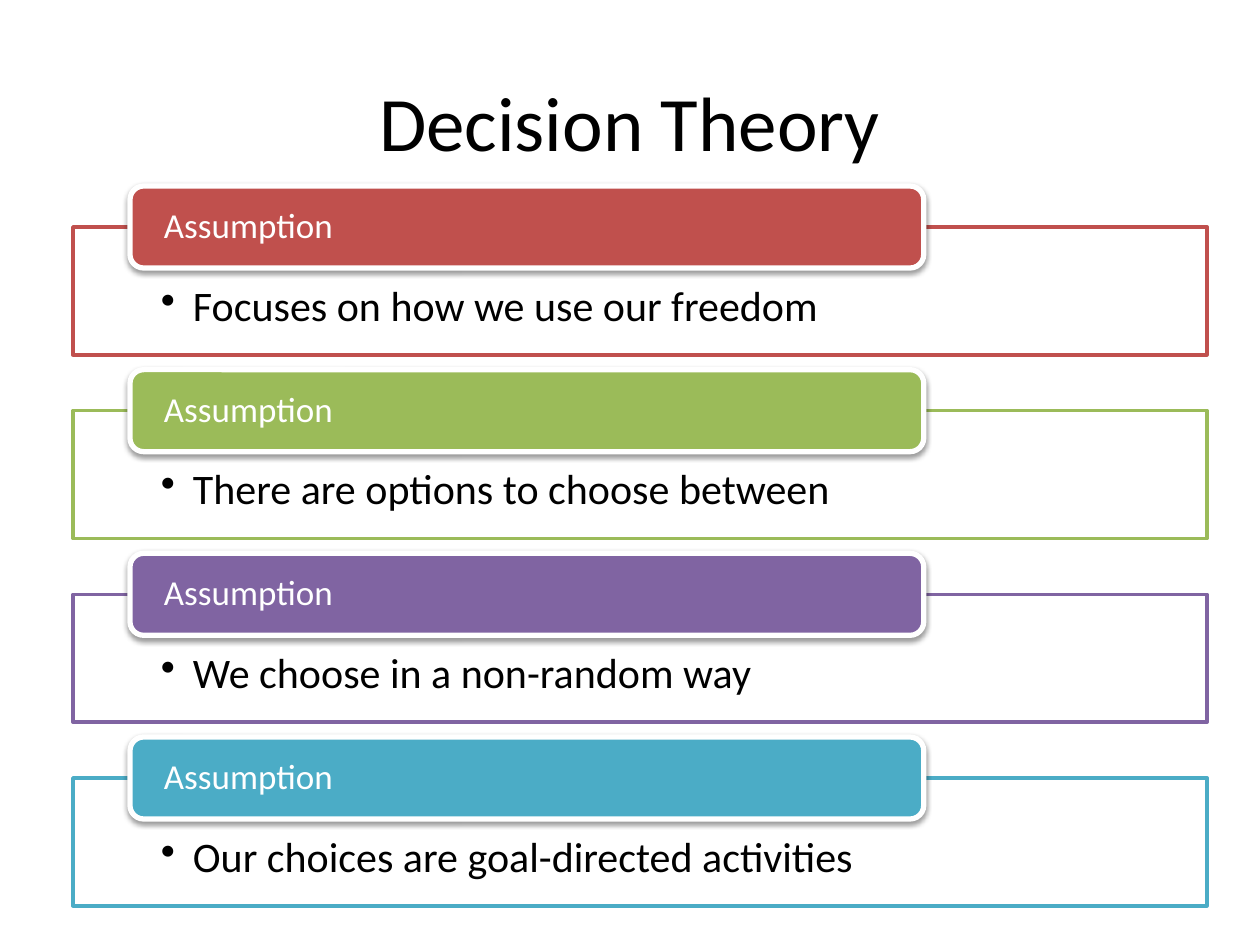
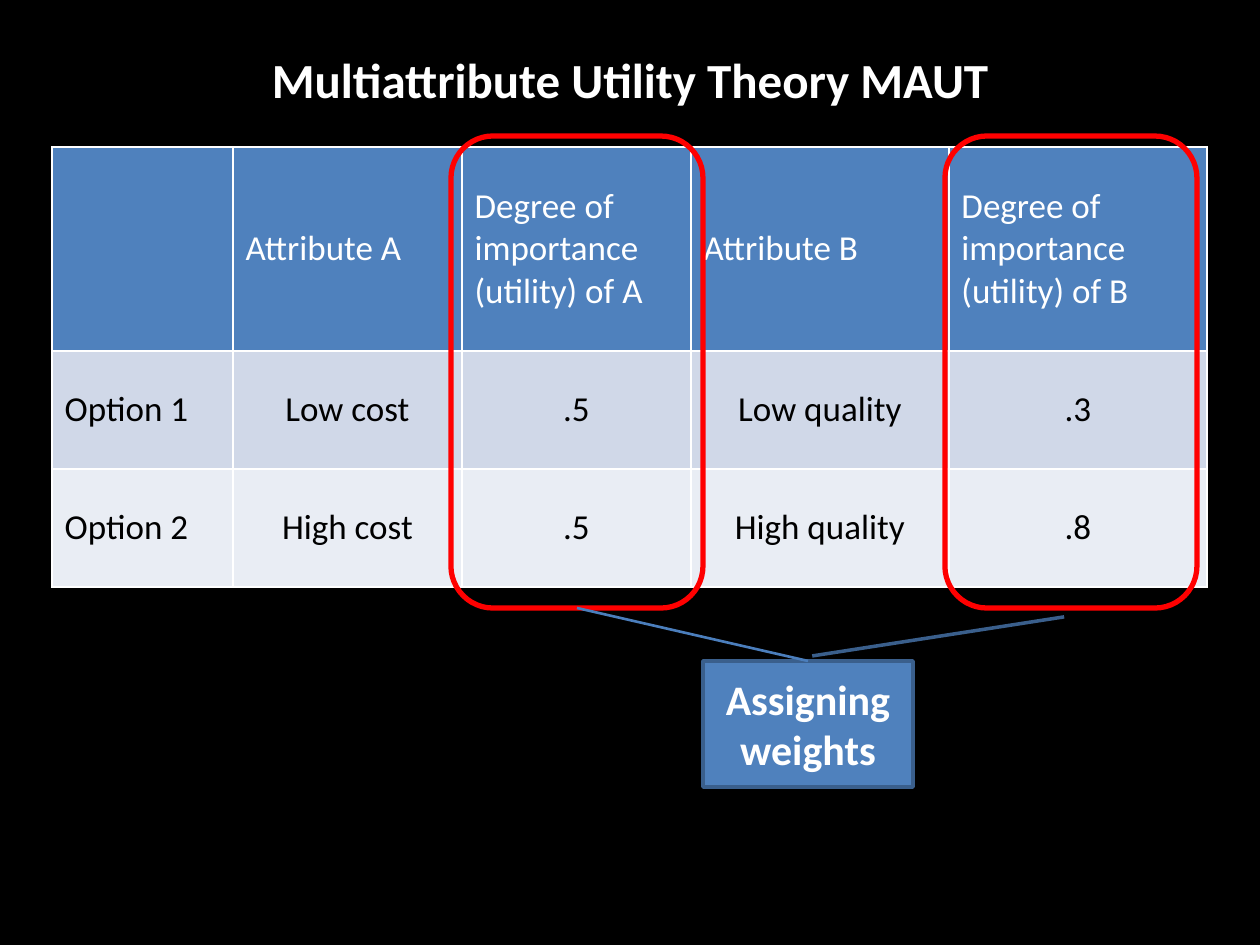
from dataclasses import dataclass
from typing import NamedTuple

from lxml.etree import SubElement
from pptx import Presentation
from pptx.dml.color import RGBColor
from pptx.enum.shapes import MSO_CONNECTOR, MSO_SHAPE
from pptx.enum.text import MSO_ANCHOR, PP_ALIGN
from pptx.oxml import parse_xml
from pptx.oxml.ns import nsdecls, qn
from pptx.util import Pt


@dataclass(frozen=True)
class Theme:
    """Colours, font and type sizes shared by the slides."""
    font: str = "Calibri"
    white: str = "FFFFFF"
    black: str = "000000"
    blue: str = "4F81BD"
    blue_edge: str = "3A5F8C"
    blue_link: str = "4B7EBC"
    highlight: str = "FF0000"
    accents: tuple = ("C0504D", "9BBB59", "8064A2", "4BACC6")
    bands: tuple = ("D0D8E8", "E9EDF4")
    title: int = 44
    table_title: int = 28
    body: int = 24
    label: int = 20


class Box(NamedTuple):
    """A rectangle in px."""
    left: float
    top: float
    width: float
    height: float


THEME = Theme()
PX_PER_INCH = 126
ASSUMPTIONS = (
    "Focuses on how we use our freedom",
    "There are options to choose between",
    "We choose in a non-random way",
    "Our choices are goal-directed activities",
)
UTILITIES = (
    ("", "Attribute A", "Degree of importance (utility) of A",
     "Attribute B", "Degree of importance (utility) of B"),
    ("Option 1", "Low cost", ".5", "Low quality", ".3"),
    ("Option 2", "High cost", ".5", "High quality", ".8"),
)


def emu(px):
    """Turn px into EMU."""
    return round(px * 914400 / PX_PER_INCH)


def apply(target, values):
    """Set each named attribute on the target."""
    for name, value in values.items():
        setattr(target, name, value)


def write(frame, text, size, color, bold=False, align=PP_ALIGN.LEFT,
          anchor=MSO_ANCHOR.MIDDLE, insets=None):
    """Fill a text frame with one styled paragraph and return it."""
    apply(frame, {"word_wrap": True, "vertical_anchor": anchor})
    if insets:
        sides = ("margin_left", "margin_top", "margin_right", "margin_bottom")
        apply(frame, dict(zip(sides, map(emu, insets))))
    paragraph = frame.paragraphs[0]
    paragraph.alignment = align
    run = paragraph.add_run()
    run.text = text
    apply(run.font, {"name": THEME.font, "size": Pt(size), "bold": bold})
    run.font.color.rgb = RGBColor.from_string(color)
    return paragraph


def add_block(slide, kind, box, fill, edge, weight):
    """Add a flat shape with the given fill and outline."""
    block = slide.shapes.add_shape(kind, *map(emu, box))
    block.shadow.inherit = False
    if fill:
        block.fill.solid()
        block.fill.fore_color.rgb = RGBColor.from_string(fill)
    else:
        block.fill.background()
    block.line.color.rgb = RGBColor.from_string(edge)
    block.line.width = Pt(weight)
    return block


def add_title(slide, box, text, size, color, bold=False):
    """Place a centred title in the box."""
    title = slide.shapes.add_textbox(*map(emu, box))
    write(title.text_frame, text, size, color, bold, PP_ALIGN.CENTER)


def add_slide(deck, background):
    """Add a blank slide with a plain background."""
    slide = deck.slides.add_slide(deck.slide_layouts[6])
    slide.background.fill.solid()
    slide.background.fill.fore_color.rgb = RGBColor.from_string(background)
    return slide


def add_bullet(paragraph, indent):
    """Give a paragraph a hanging bullet."""
    properties = paragraph._p.get_or_add_pPr()
    properties.set("marL", str(emu(indent)))
    properties.set("indent", str(-emu(indent)))
    SubElement(properties, qn("a:buChar"), char="•")


def add_drop_shadow(block):
    """Cast a soft shadow straight down."""
    effects = block._element.spPr.find(qn("a:effectLst"))
    effects.append(parse_xml(
        f'<a:outerShdw {nsdecls("a")} blurRad="{Pt(3.1)}" dist="{Pt(1.6)}" '
        f'dir="5400000" rotWithShape="0"><a:srgbClr val="{THEME.black}">'
        '<a:alpha val="38000"/></a:srgbClr></a:outerShdw>'))


def add_assumption(slide, box, text, accent):
    """Place an outlined statement with its heading tab in the box."""
    tab_height, overhang = 82, 41
    panel = Box(box.left, box.top + overhang, box.width, box.height - overhang)
    statement = add_block(slide, MSO_SHAPE.RECTANGLE, panel, THEME.white, accent, 2)
    tint = statement._element.spPr.find(qn("a:solidFill"))[0]
    SubElement(tint, qn("a:alpha"), val="90000")
    paragraph = write(statement.text_frame, text, THEME.body, THEME.black,
                      anchor=MSO_ANCHOR.TOP, insets=(88, 58, 88, 24))
    paragraph.line_spacing = 0.9
    add_bullet(paragraph, 32)

    tab = Box(box.left + 57, box.top, box.width * 0.7, tab_height)
    heading = add_block(slide, MSO_SHAPE.ROUNDED_RECTANGLE, tab, accent, THEME.white, 3)
    add_drop_shadow(heading)
    write(heading.text_frame, "Assumption", THEME.label, THEME.white,
          insets=(30, 0, 30, 0)).line_spacing = 0.9


def add_assumptions(slide, box):
    """Stack the assumptions evenly over the height of the box."""
    card_height = 169
    pitch = (box.height - card_height) / (len(ASSUMPTIONS) - 1)
    for index, (text, accent) in enumerate(zip(ASSUMPTIONS, THEME.accents)):
        card = Box(box.left, box.top + index * pitch, box.width, card_height)
        add_assumption(slide, card, text, accent)


def add_borders(cell):
    """Rule all four sides of a table cell in white."""
    properties = cell._tc.get_or_add_tcPr()
    for position, side in enumerate(("lnL", "lnR", "lnT", "lnB")):
        properties.insert(position, parse_xml(
            f'<a:{side} {nsdecls("a")} w="{Pt(1)}"><a:solidFill>'
            f'<a:srgbClr val="{THEME.white}"/></a:solidFill></a:{side}>'))


def add_utility_table(slide, box):
    """Place the table of options and utilities in the box."""
    widths, heights = (181, 229, 229, 258, 258), (204, 118, 118)
    table = slide.shapes.add_table(len(heights), len(widths), *map(emu, box)).table
    for column, width in zip(table.columns, widths):
        column.width = emu(width)
    for row, height in zip(table.rows, heights):
        row.height = emu(height)
    fills = (THEME.blue, *THEME.bands)
    for row, (texts, fill) in enumerate(zip(UTILITIES, fills)):
        for column, text in enumerate(texts):
            cell = table.cell(row, column)
            cell.fill.solid()
            cell.fill.fore_color.rgb = RGBColor.from_string(fill)
            add_borders(cell)
            cell.vertical_anchor = MSO_ANCHOR.MIDDLE
            if text:
                write(cell.text_frame, text, THEME.label,
                      THEME.black if row else THEME.white,
                      align=PP_ALIGN.CENTER if row and column else PP_ALIGN.LEFT)


def add_weights(slide, box):
    """Frame both utility columns and link them to the callout below."""
    frames = [
        add_block(slide, MSO_SHAPE.ROUNDED_RECTANGLE,
                  Box(left, box.top, 252, 472), None, THEME.highlight, 3)
        for left in (box.left, box.left + box.width - 252)
    ]
    note = Box(box.left + 252, box.top + box.height - 126, 210, 126)
    callout = add_block(slide, MSO_SHAPE.LINE_CALLOUT_1, note,
                        THEME.blue, THEME.blue_edge, 2)
    for index, value in enumerate((-0.04, 0.52, -0.35, 1.72)):
        callout.adjustments[index] = value
    write(callout.text_frame, "Assigning weights", THEME.body, THEME.white,
          True, PP_ALIGN.CENTER)

    start = emu(note.left + note.width / 2), emu(note.top)
    link = slide.shapes.add_connector(MSO_CONNECTOR.STRAIGHT, *start, *start)
    link.end_connect(frames[0], 2)
    link.line.color.rgb = RGBColor.from_string(THEME.blue_link)
    link.line.width = Pt(1.5)
    SubElement(link._element.spPr, qn("a:effectLst"))


def build_decision_slide(deck):
    """Build the slide on the assumptions of decision theory."""
    slide = add_slide(deck, THEME.white)
    add_title(slide, Box(63, 42, 1134, 157), "Decision Theory", THEME.title, THEME.black)
    add_assumptions(slide, Box(73, 186, 1134, 720))


def build_utility_slide(deck):
    """Build the slide on weighing attributes."""
    slide = add_slide(deck, THEME.black)
    add_title(slide, Box(0, 0, 1260, 157), "Multiattribute Utility Theory MAUT",
              THEME.table_title, THEME.white, True)
    add_utility_table(slide, Box(52, 147, 1155, 440))
    add_weights(slide, Box(451, 136, 746, 651))


def main():
    """Build and save the presentation."""
    deck = Presentation()
    apply(deck, {"slide_width": emu(1260), "slide_height": emu(945)})
    build_decision_slide(deck)
    build_utility_slide(deck)
    deck.save("out.pptx")


if __name__ == "__main__":
    main()
